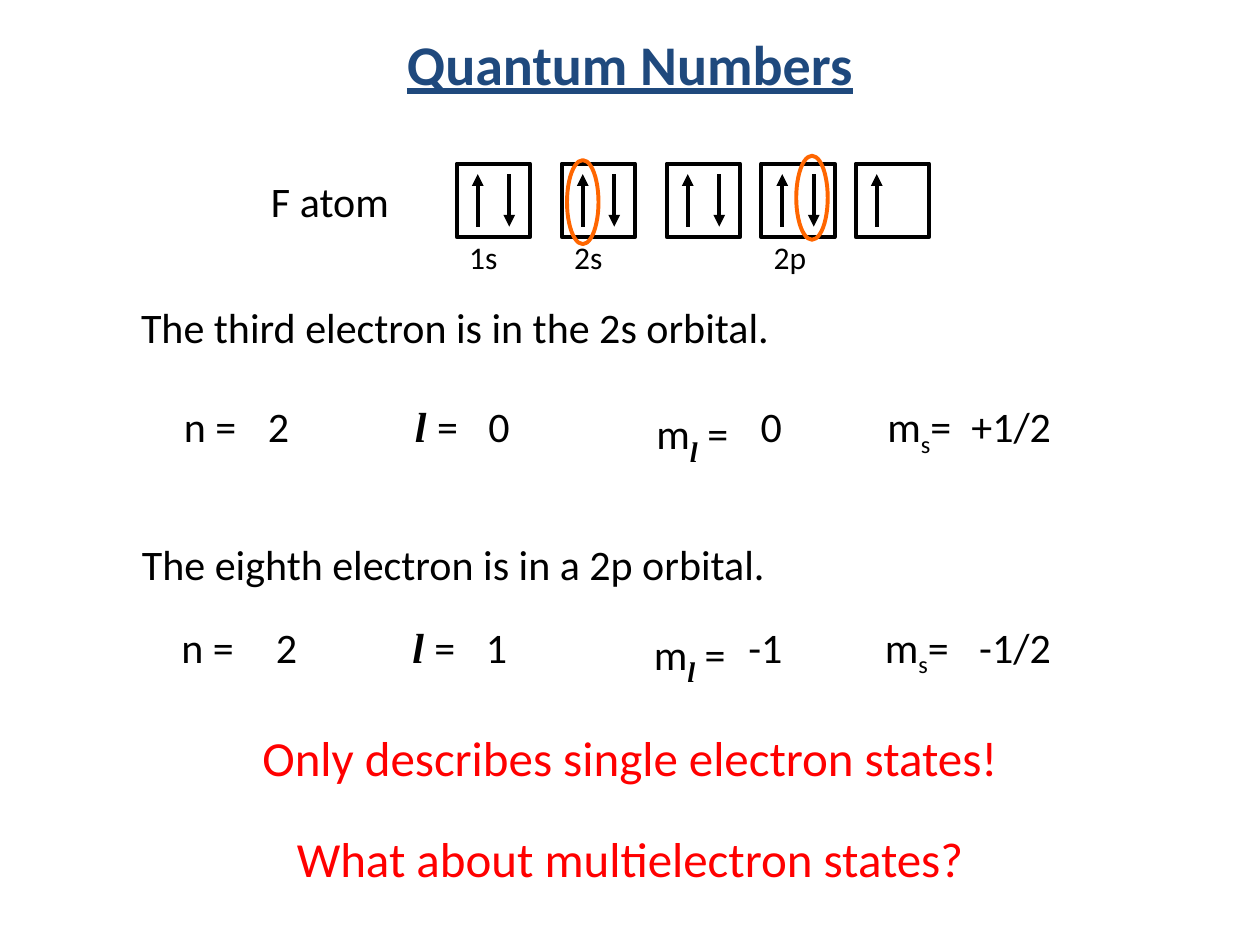
from lxml import etree
from pptx import Presentation
from pptx import util as u
from pptx.dml import color
from pptx.enum import shapes, text
from pptx.oxml import ns

Pt = u.Pt
BLACK = color.RGBColor(0x00, 0x00, 0x00)
NAVY = color.RGBColor(0x1F, 0x49, 0x7D)
ORANGE = color.RGBColor(0xFF, 0x66, 0x00)
RED = color.RGBColor(0xFF, 0x00, 0x00)
LEFT, CENTER = text.PP_ALIGN.LEFT, text.PP_ALIGN.CENTER


def add_run(p, content, size=24, font="Calibri", rgb=BLACK, bold=False,
            italic=False, underline=False, subscript=False):
    r = p.add_run()
    r.text = content
    f = r.font
    f.size, f.name, f.bold, f.italic = Pt(size), font, bold, italic
    f.underline = underline
    f.color.rgb = rgb
    if subscript:
        r._r.get_or_add_rPr().set("baseline", "-25000")


class Sheet:
    """Current slide and the shared line and text style."""
    line_width = Pt(2.25)

    def __init__(self, s):
        self.s = s

    def text(self, x, y, w, h, runs, align=LEFT, wrap=True, grow=True,
             inset_right=7.2, **fmt):
        """Text box; runs is a string or a list of (text, format) pairs."""
        sp = self.s.shapes.add_textbox(Pt(x), Pt(y), Pt(w), Pt(h))
        tf = sp.text_frame
        tf.word_wrap = wrap
        tf.margin_right = Pt(inset_right)
        if grow:
            tf.auto_size = text.MSO_AUTO_SIZE.SHAPE_TO_FIT_TEXT
        else:
            tf.vertical_anchor = text.MSO_ANCHOR.MIDDLE
        p = tf.paragraphs[0]
        p.alignment = align
        for content, own in [(runs, {})] if isinstance(runs, str) else runs:
            add_run(p, content, **{**fmt, **own})

    def outline(self, kind, x, y, w, h, rgb):
        sp = self.s.shapes.add_shape(kind, Pt(x), Pt(y), Pt(w), Pt(h))
        sp.shadow.inherit = False
        sp.fill.background()
        sp.line.color.rgb = rgb
        sp.line.width = self.line_width

    def arrow(self, x, y1, y2):
        c = self.s.shapes.add_connector(
            shapes.MSO_CONNECTOR.STRAIGHT, Pt(x), Pt(y1), Pt(x), Pt(y2))
        c.line.color.rgb = BLACK
        c.line.width = self.line_width
        etree.SubElement(c.line._get_or_add_ln(), ns.qn("a:tailEnd"), type="triangle")
        etree.SubElement(c._element.spPr, ns.qn("a:effectLst"))


def draw_orbitals(sheet):
    """Orbital boxes with electron spins, as (left, electrons, label)."""
    sheet.text(140.5, 96.5, 96, 36.5, "F atom", align=CENTER)
    orbitals = [(261, 2, "1s"), (321, 2, "2s"), (381, 2, None),
                (435, 2, "2p"), (489, 1, None)]
    top, side, up, down = 93.5, 42, 99.5, 129.5
    for x, electrons, label in orbitals:
        sheet.outline(shapes.MSO_SHAPE.RECTANGLE, x, top, side, side, BLACK)
        sheet.arrow(x + 12, down, up)
        if electrons == 2:
            sheet.arrow(x + 30, up, down)
        if label:
            sheet.text(x, 132.5, side, 29, label, size=18, inset_right=0)
    # Rings around the third and eighth electrons
    for x, y in [(324, 91.5), (455, 89)]:
        sheet.outline(shapes.MSO_SHAPE.OVAL, x, y, 18, 48, ORANGE)


def draw_numbers(sheet, x, y, values):
    """One row of the four quantum numbers; values are (left, width, text)."""
    ell = dict(font="Times New Roman", bold=True, italic=True)
    names = [
        (0, [("n =", {})]),
        (132, [("l ", ell), ("=", {})]),
        (270, [("m", {}), ("l", dict(ell, size=28, subscript=True)), (" =", {})]),
        (402, [("m", {}), ("s", dict(subscript=True)), ("=", {})]),
    ]
    for dx, runs in names:
        sheet.text(x + dx, y, 60, 36.5, runs)
    for left, width, value in values:
        sheet.text(left, y, width, 36, value, wrap=False)


def main():
    prs = Presentation()
    prs.slide_width, prs.slide_height = Pt(720), Pt(540)
    sheet = Sheet(prs.slides.add_slide(prs.slide_layouts[6]))

    # Title
    sheet.text(36, 0, 648, 72, "Quantum Numbers", align=CENTER, grow=False,
               size=32, rgb=NAVY, bold=True, underline=True)

    # Orbital diagram
    draw_orbitals(sheet)

    # Third electron
    sheet.text(73.5, 168.5, 569, 36, "The third electron is in the 2s orbital.")
    draw_numbers(sheet, 98, 225.5, [(146, 27, "2"), (272, 27, "0"),
                                    (427.5, 27, "0"), (548, 60, "+1/2")])

    # Eighth electron
    sheet.text(74, 304, 528, 36, "The eighth electron is in a 2p orbital.")
    draw_numbers(sheet, 96.5, 351.5, [(150.5, 27, "2"), (270.5, 27, "1"),
                                      (420.5, 34.5, "-1"), (552.5, 56, "-1/2")])

    # Closing remarks
    for y, remark in [(412, "Only describes single electron states!"),
                      (470, "What about multielectron states?")]:
        sheet.text(77.5, y, 565, 41, remark, align=CENTER, size=28, rgb=RED)

    prs.save("out.pptx")


if __name__ == "__main__":
    main()
